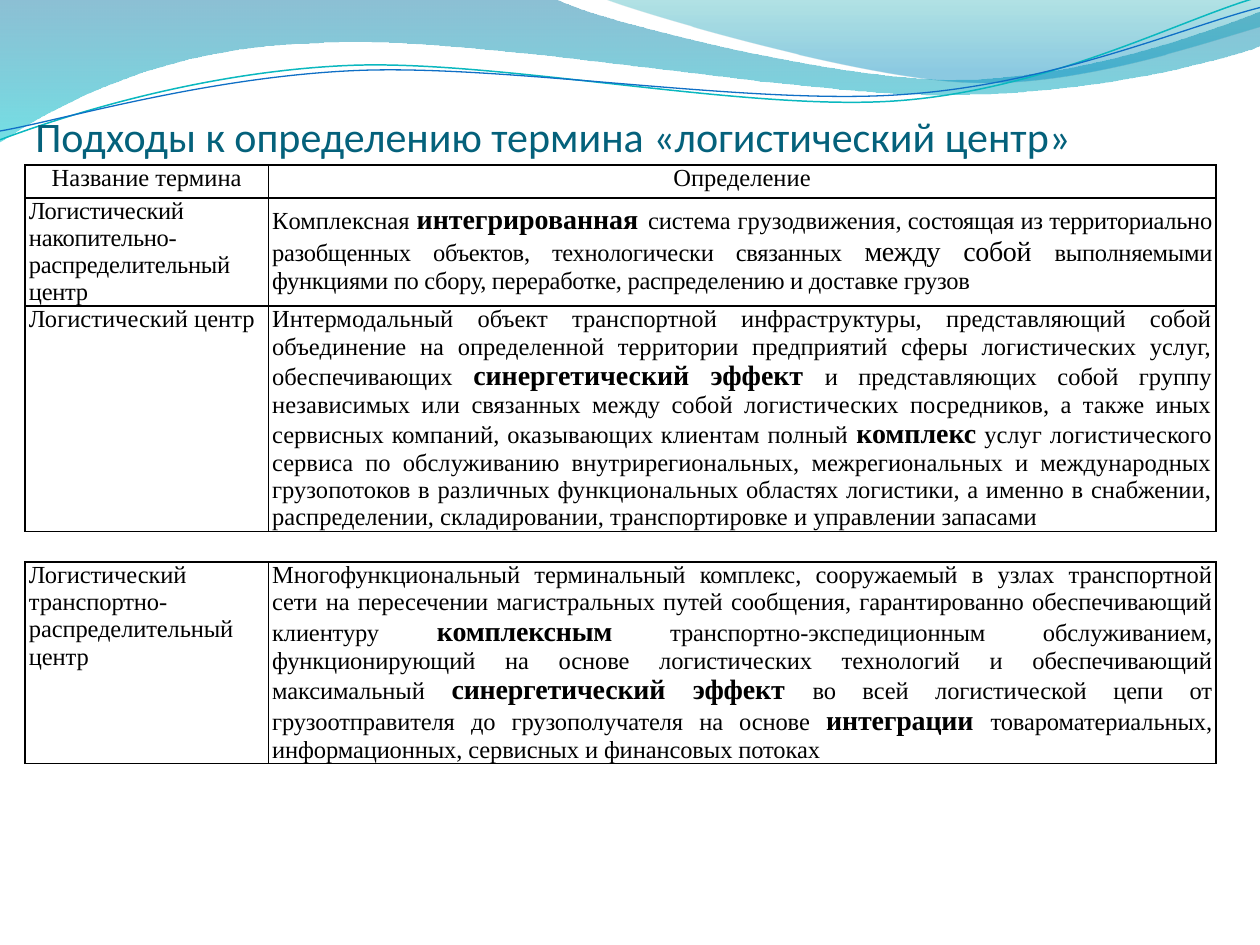
from dataclasses import dataclass, replace

from lxml import etree
from pptx import Presentation
from pptx import util as u
from pptx.dml.color import RGBColor
from pptx.enum import text
from pptx.oxml import ns

BLACK = "000000"
CENTER, JUSTIFY = text.PP_ALIGN.CENTER, text.PP_ALIGN.JUSTIFY
COLUMN_WIDTHS = (1.93, 7.52)


@dataclass
class Stop:
    position: float
    color: str
    opacity: int


@dataclass
class Wave:
    """Steps hold 2 numbers for a straight line, 6 for a Bezier curve."""
    start: tuple
    steps: list
    stops: tuple = ()
    line_color: str = ""
    line_width: float = 0


@dataclass
class Span:
    text: str
    size: float = 14
    bold: bool = False
    spacing: float = 0


@dataclass
class Grid:
    top: float
    row_heights: tuple
    rows: list  # rows of cells, cells of paragraphs, paragraphs of spans
    header: bool = False


def strong(words: str) -> Span:
    return Span(words, 16, True)


def spaced(spacing: float, *spans: Span) -> list:
    return [replace(span, spacing=spacing) for span in spans]


WAVES = [
    Wave((0, 0), [(4.4, -0.01), (4.76, 0.17, 6.64, 0.63, 7.58, 0.63),
                  (8.53, 0.63, 9.58, 0.26, 10, 0.09), (10.01, 0.36),
                  (9.83, 0.44, 8.7, 0.76, 7.46, 0.75),
                  (6.22, 0.75, 3.82, 0.28, 2.57, 0.34),
                  (1.29, 0.36, 0.46, 0.83, -0.01, 1.13), (0, 0)],
         stops=(Stop(0, "0074A1", 45), Stop(1, "00C6CF", 55))),
    Wave((4.79, -0.01), [(5.09, 0.11, 6.82, 0.62, 7.69, 0.65),
                         (8.56, 0.69, 9.61, 0.32, 10, 0.21), (10, 0),
                         (4.79, -0.01)],
         stops=(Stop(0, "00A1A9", 30), Stop(0.8, "008BBF", 45))),
    Wave((0, 1.11), [(0.48, 0.93, 1.58, 0.57, 2.77, 0.52),
                     (3.95, 0.47, 5.93, 0.89, 7.13, 0.8),
                     (8.33, 0.71, 9.38, 0.15, 9.98, -0.02)],
         line_color="0AB8BF", line_width=0.85),
    Wave((0, 1.04), [(0.47, 0.96, 1.64, 0.61, 2.83, 0.56),
                     (4.03, 0.51, 5.97, 0.84, 7.17, 0.75),
                     (8.36, 0.67, 9.41, 0.21, 10, 0.06)],
         line_color="0F6FC6", line_width=0.75),
]

GRIDS = [
    Grid(1.31, (0.26, 0.86, 1.79), [
        [[[Span("Название термина")]], [[Span("Определение")]]],
        [[spaced(-0.2, Span("Логистический ")),
          spaced(-0.2, Span("накопительно-распределительный центр "))],
         [[Span("К", spacing=-0.2), Span("омплексная "),
           strong("интегрированная"), Span(" ", 20, True),
           Span("система грузодвижения"),
           *spaced(-0.2,
                   Span(", состоящая из территориально разобщенных объектов, "
                        "технологически связанных "),
                   Span("между собой ", 16),
                   Span("выполняемыми функциями по сбору, переработке, "
                        "распределению и доставке грузов"))]]],
        [[[Span("Логистический центр")]],
         [[Span("Интермодальный объект транспортной инфраструктуры, представляющий "
                "собой объединение на определенной территории предприятий сферы "
                "логистических услуг, обеспечивающих "),
           strong("синергетический эффект "),
           Span("и представляющих собой группу независимых или связанных между собой "
                "логистических посредников, а также иных сервисных компаний, "
                "оказывающих клиентам полный "),
           strong("комплекс"),
           Span(" услуг логистического сервиса по обслуживанию внутрирегиональных, "
                "межрегиональных и международных грузопотоков в различных "
                "функциональных областях логистики, а именно в снабжении, "
                "распределении, складировании, транспортировке и управлении "
                "запасами")]]],
    ], header=True),
    Grid(4.46, (1.6,), [
        [[spaced(-0.08, Span("Логистический ")),
          spaced(-0.08, Span("транспортно-распределительный центр"))],
         [spaced(-0.08,
                 Span("Многофункциональный терминальный комплекс, сооружаемый в узлах "
                      "транспортной сети на пересечении магистральных путей сообщения, "
                      "гарантированно обеспечивающий клиентуру "),
                 strong("комплексным"),
                 Span(" транспортно-экспедиционным обслуживанием, функционирующий на "
                      "основе логистических технологий и обеспечивающий максимальный "),
                 strong("синергетический эффект "),
                 Span("во всей логистической цепи от грузоотправителя до "
                      "грузополучателя на основе "),
                 strong("интеграции "),
                 Span("товароматериальных, информационных, сервисных и финансовых "
                      "потоках"))]],
    ]),
]


def rgb(color: str) -> RGBColor:
    return RGBColor.from_string(color)


def bend(shape, steps: list) -> None:
    """Join every three straight segments of a curved step into one Bezier."""
    segments = iter(list(shape._element.iter(ns.qn("a:lnTo"))))
    for step in steps:
        segment = next(segments)
        if len(step) == 6:
            segment.tag = ns.qn("a:cubicBezTo")
            for extra in (next(segments), next(segments)):
                segment.append(extra[0])
                extra.getparent().remove(extra)


def draw_wave(page, wave: Wave) -> None:
    points = [(u.Inches(step[i]), u.Inches(step[i + 1]))
              for step in wave.steps for i in range(0, len(step), 2)]
    builder = page.shapes.build_freeform(*map(u.Inches, wave.start))
    builder.add_line_segments(points, close=bool(wave.stops))
    shape = builder.convert_to_shape()
    bend(shape, wave.steps)
    shape.shadow.inherit = False
    if not wave.stops:
        shape.fill.background()
        shape.line.color.rgb = rgb(wave.line_color)
        shape.line.width = u.Pt(wave.line_width)
        return
    shape.line.fill.background()
    shape.fill.gradient()
    shape.fill.gradient_angle = 270  # counter-clockwise: top to bottom
    for target, stop in zip(shape.fill.gradient_stops, wave.stops):
        target.position = stop.position
        target.color.rgb = rgb(stop.color)
    for color, stop in zip(shape._element.iter(ns.qn("a:srgbClr")), wave.stops):
        etree.SubElement(color, ns.qn("a:alpha"), val=str(stop.opacity * 1000))


def add_span(para, words: str, *, size: float, font: str, color: str,
             bold: bool = False, spacing: float = 0) -> None:
    span = para.add_run()
    span.text = words
    span.font.size, span.font.name, span.font.bold = u.Pt(size), font, bold
    span.font.color.rgb = rgb(color)
    if spacing:
        span._r.get_or_add_rPr().set("spc", str(round(spacing * 100)))


def add_borders(cell) -> None:
    properties = cell._tc.get_or_add_tcPr()
    for index, side in enumerate(("lnL", "lnR", "lnT", "lnB")):
        line = etree.Element(ns.qn(f"a:{side}"), w=str(u.Pt(1)))
        fill = etree.SubElement(line, ns.qn("a:solidFill"))
        etree.SubElement(fill, ns.qn("a:srgbClr"), val=BLACK)
        properties.insert(index, line)


def fill_cell(cell, paragraphs: list, align) -> None:
    cell.fill.background()
    cell.margin_left = cell.margin_right = u.Inches(0.03)
    cell.margin_top = cell.margin_bottom = 0
    add_borders(cell)
    frame = cell.text_frame
    for index, spans in enumerate(paragraphs):
        para = frame.add_paragraph() if index else frame.paragraphs[0]
        para.alignment = align
        for span in spans:
            add_span(para, span.text, size=span.size, font="Times New Roman",
                     color=BLACK, bold=span.bold, spacing=span.spacing)


def draw_grid(page, grid: Grid) -> None:
    table = page.shapes.add_table(
        len(grid.rows), len(COLUMN_WIDTHS), u.Inches(0.2), u.Inches(grid.top),
        u.Inches(sum(COLUMN_WIDTHS)), u.Inches(sum(grid.row_heights))).table
    table.first_row = table.horz_banding = False
    for column, width in zip(table.columns, COLUMN_WIDTHS):
        column.width = u.Inches(width)
    for r, (height, cells) in enumerate(zip(grid.row_heights, grid.rows)):
        table.rows[r].height = u.Inches(height)
        for c, paragraphs in enumerate(cells):
            fill_cell(table.cell(r, c), paragraphs,
                      CENTER if grid.header and r == 0 else JUSTIFY)


def draw_title(page, words: str) -> None:
    box = page.shapes.title
    box.left, box.top, box.width, box.height = map(u.Inches, (0.28, 0.6, 10, 0.68))
    frame = box.text_frame
    frame.auto_size = text.MSO_AUTO_SIZE.NONE
    frame.word_wrap = True
    frame.vertical_anchor = text.MSO_ANCHOR.BOTTOM
    frame.margin_left = frame.margin_right = frame.margin_bottom = 0
    frame.margin_top = u.Inches(0.05)
    para = frame.paragraphs[0]
    para.alignment = text.PP_ALIGN.LEFT
    add_span(para, words, size=24, font="Calibri", color="04617B")
    page.shapes._spTree.append(box._element)  # in front of the waves


def main() -> None:
    deck = Presentation()
    deck.slide_width, deck.slide_height = u.Inches(10), u.Inches(7.5)
    page = deck.slides.add_slide(deck.slide_layouts[5])
    # Decorative waves along the top
    for wave in WAVES:
        draw_wave(page, wave)
    # Title and tables of terms
    draw_title(page, "Подходы к определению термина «логистический центр»")
    for grid in GRIDS:
        draw_grid(page, grid)
    deck.save("out.pptx")


if __name__ == "__main__":
    main()
